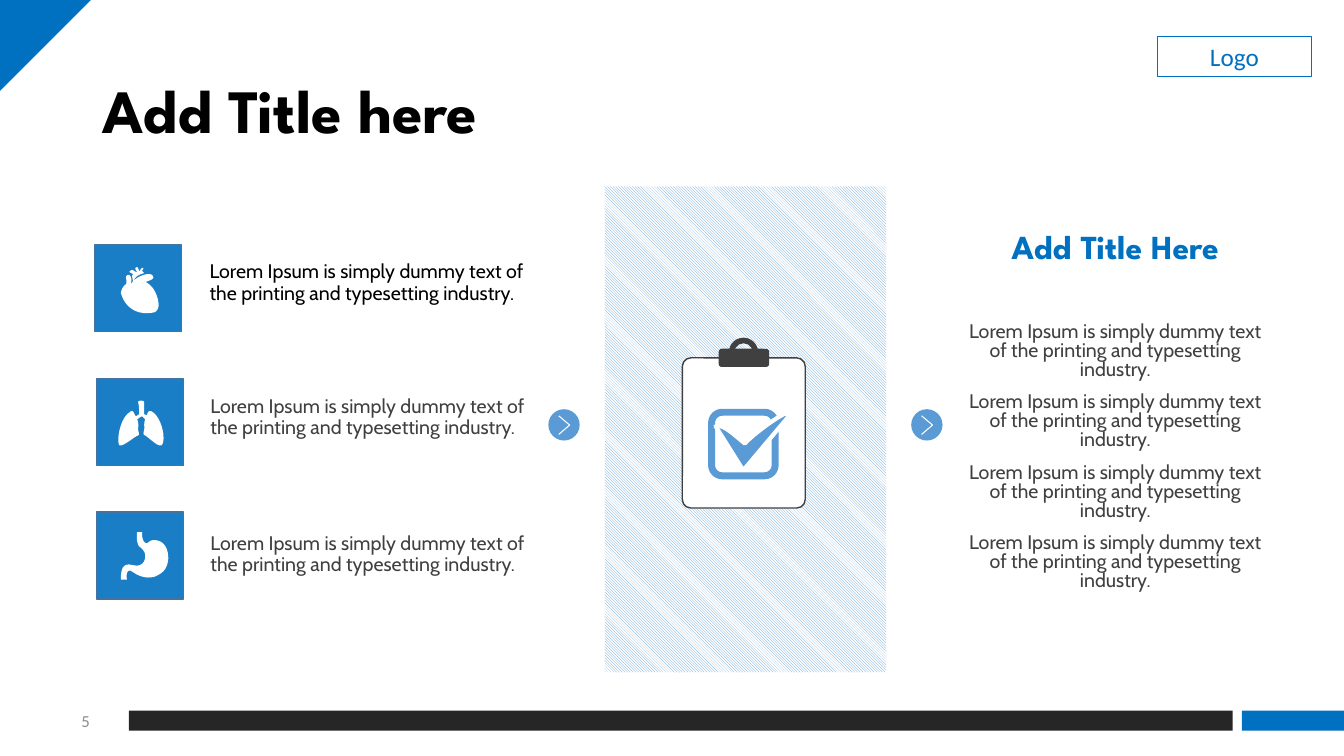
from lxml.etree import SubElement
from pptx import Presentation
from pptx.dml.color import RGBColor
from pptx.enum.dml import MSO_PATTERN
from pptx.enum.shapes import MSO_SHAPE as Shape
from pptx.enum.text import MSO_ANCHOR as Anchor, PP_ALIGN as Align
from pptx.oxml.ns import qn
from pptx.util import Pt

BLUE, LIGHT_BLUE, TILE_EDGE = "0070C0", "5B9BD5", "43739E"
WHITE, BLACK, CHARCOAL, GRAY = "FFFFFF", "000000", "404040", "8C8C8C"
LOREM = "Lorem Ipsum is simply dummy text of the printing and typesetting industry."
OUTLINE_UNIT = 0.72
CURVE_STEPS = 10

HEART = [
    [(147, 272), (149, 272, 150, 272, 151, 273), (156, 278, 143, 279, 145, 280),
     (150, 283, 153, 287, 155, 292), (157, 297, 160, 307, 153, 310),
     (133, 314, 123, 302, 120, 291), (120, 288, 122, 284, 125, 282),
     (126, 280, 125, 277, 125, 275), (125, 272, 132, 270, 130, 282),
     (133, 276, 142, 272, 147, 272)],
    [(136, 265), (137, 265, 138, 269, 138, 269), (139, 269, 140, 265, 142, 266),
     (143, 266, 141, 268, 141, 269), (143, 271), (135, 273, 134, 276, 132, 279),
     (131, 274), (132, 272), (131, 271, 127, 270, 129, 269),
     (132, 266, 133, 270, 136, 270), (136, 269, 132, 266, 136, 265)],
]
LUNGS = [
    [(137, 399), (137, 397, 143, 397, 143, 399), (143, 411), (146, 412),
     (146, 410, 147, 407, 150, 408), (159, 412, 165, 433, 161, 441),
     (158, 445, 150, 436, 144, 432), (141, 431, 143, 428, 143, 426),
     (144, 424, 142, 422, 144, 416), (143, 415, 142, 414, 141, 413),
     (138, 414, 138, 415, 136, 416), (138, 420, 137, 424, 137, 426),
     (137, 428, 139, 431, 137, 432), (132, 434, 124, 442, 119, 442),
     (115, 441, 118, 414, 130, 408), (133, 407, 133, 412, 135, 413),
     (138, 411), (138, 408, 138, 402, 137, 399)],
]
STOMACH = [
    [(136, 528), (141, 528), (141, 532, 141, 537, 145, 539),
     (148, 539, 148, 535, 155, 536), (162, 537, 167, 543, 167, 554),
     (166, 565, 162, 568, 154, 572), (141, 576, 132, 567, 129, 566),
     (126, 566, 125, 570, 126, 575), (120, 575), (120, 569, 120, 560, 128, 560),
     (134, 561, 139, 563, 143, 557), (145, 552, 145, 547, 138, 542),
     (137, 541, 135, 536, 136, 528)],
]
CHECK_MARK = [
    [(739, 440), (749, 429, 782, 405, 786, 409), (738, 466), (737, 466),
     (710, 423), (717, 420, 729, 432, 739, 440)],
]


def color(hex_string):
    """Return the colour for a hex string."""
    return RGBColor.from_string(hex_string)


def style(shape, fill=None, line=None, line_width=1, alpha=None):
    """Set the fill and line of a shape and remove its shadow."""
    shape.shadow.inherit = False
    if fill:
        shape.fill.solid()
        shape.fill.fore_color.rgb = color(fill)
    else:
        shape.fill.background()
    if alpha:
        fill_color = shape.fill._xPr.find(qn("a:solidFill"))[0]
        SubElement(fill_color, qn("a:alpha"), val=str(alpha * 1000))
    if line:
        shape.line.color.rgb = color(line)
        shape.line.width = Pt(line_width)
    else:
        shape.line.fill.background()
    return shape


def add_preset(slide, kind, box, **look):
    """Add a styled preset shape in a box given in points."""
    shape = slide.shapes.add_shape(kind, *map(Pt, box))
    return style(shape, **look)


def write(shape, paragraphs, size, font, hex_string, align=Align.LEFT,
          anchor=Anchor.TOP, spacing=1.0, before=0, bold=False):
    """Write equally styled paragraphs into a shape."""
    frame = shape.text_frame
    frame.word_wrap = True
    frame.vertical_anchor = anchor
    frame.text = "\n".join(paragraphs)
    for paragraph in frame.paragraphs:
        paragraph.alignment = align
        paragraph.line_spacing = spacing
        paragraph.space_before = Pt(before)
        paragraph.font.size = Pt(size)
        paragraph.font.name = font
        paragraph.font.bold = bold
        paragraph.font.color.rgb = color(hex_string)


def add_text(slide, box, paragraphs, *args, **options):
    """Add a text box in a box given in points."""
    write(slide.shapes.add_textbox(*map(Pt, box)), paragraphs, *args, **options)


def bezier(points, t):
    """Return the point at t on a cubic curve."""
    weights = ((1 - t) ** 3, 3 * t * (1 - t) ** 2, 3 * t * t * (1 - t), t ** 3)
    return tuple(sum(w * p[axis] for w, p in zip(weights, points)) for axis in (0, 1))


def flatten(contour):
    """Turn a contour of lines and curves into a list of points."""
    points = [contour[0]]
    for segment in contour[1:]:
        if len(segment) == 2:
            points.append(segment)
        else:
            controls = [points[-1], segment[:2], segment[2:4], segment[4:]]
            points += [bezier(controls, step / CURVE_STEPS)
                       for step in range(1, CURVE_STEPS + 1)]
    return points


def add_outline(slide, contours, unit=OUTLINE_UNIT, close=True, **look):
    """Add a freeform from contours measured in units of points."""
    builder = None
    for contour in contours:
        points = [(Pt(x * unit), Pt(y * unit)) for x, y in flatten(contour)]
        if builder is None:
            builder = slide.shapes.build_freeform(*points[0])
        else:
            builder.move_to(*points[0])
        builder.add_line_segments(points[1:], close=close)
    style(builder.convert_to_shape(), **look)


def add_arrow_badge(slide, left, top=292.3):
    """Add a round badge with a thin chevron."""
    add_preset(slide, Shape.OVAL, (left, top, 22.4, 22.4), fill=LIGHT_BLUE)
    chevron = [(left + 7.4, top + 4.7), (left + 15.2, top + 11.3), (left + 7.4, top + 18)]
    add_outline(slide, [chevron], unit=1, close=False, line=WHITE, line_width=0.75)


def add_organ_row(slide, tile, text_corner, icon, hex_string):
    """Add a tile with an organ icon and its text."""
    add_preset(slide, Shape.RECTANGLE, (*tile, 62, 62), fill=BLUE, alpha=90, line=TILE_EDGE)
    add_outline(slide, icon, fill=WHITE)
    add_text(slide, (*text_corner, 239.8, 48.2), [LOREM], 14, "Cabin", hex_string, spacing=0.9)


def add_frame(slide):
    """Add the corner, footer bars, page number and logo box."""
    corner = add_preset(slide, Shape.RIGHT_TRIANGLE, (0, 0, 65, 65), fill=BLUE)
    corner.rotation = 90
    add_preset(slide, Shape.RECTANGLE, (92, 507.6, 788.4, 14.4), fill="262626")
    add_preset(slide, Shape.RECTANGLE, (887, 507.6, 73, 14.4), fill=BLUE)
    add_text(slide, (32.4, 500.4, 38.9, 28.8), ["5"], 12, "Calibri", GRAY,
             align=Align.RIGHT, anchor=Anchor.MIDDLE)
    logo = add_preset(slide, Shape.RECTANGLE, (826.6, 25.9, 110.2, 28.8),
                      line=BLUE, line_width=0.75)
    write(logo, ["Logo"], 18, "Calibri", BLUE, align=Align.CENTER)


def add_clipboard_panel(slide):
    """Add the striped panel with the clipboard."""
    panel = add_preset(slide, Shape.RECTANGLE, (432, 133.2, 201, 347))
    panel.fill.patterned()
    panel.fill.pattern = MSO_PATTERN.LIGHT_DOWNWARD_DIAGONAL
    panel.fill.fore_color.rgb = color(LIGHT_BLUE)
    panel.fill.back_color.rgb = color(WHITE)
    board = add_preset(slide, Shape.ROUNDED_RECTANGLE, (487.4, 255.6, 87.8, 107.3),
                       fill=WHITE, line=CHARCOAL)
    board.adjustments[0] = 0.07
    add_preset(slide, Shape.ROUNDED_RECTANGLE, (513.4, 249.1, 36, 13), fill=CHARCOAL)
    ring = add_preset(slide, Shape.BLOCK_ARC, (520.6, 241.2, 20.9, 20.9), fill=CHARCOAL)
    for index, value in enumerate((108, 213.89, 0.19)):
        ring.adjustments[index] = value
    add_preset(slide, Shape.ROUNDED_RECTANGLE, (508.3, 294.5, 45.4, 45.4),
               fill=WHITE, line=LIGHT_BLUE, line_width=5)
    add_outline(slide, CHECK_MARK, fill=LIGHT_BLUE, line=WHITE, line_width=3)


def main():
    """Build the slide and save it."""
    presentation = Presentation()
    presentation.slide_width, presentation.slide_height = Pt(960), Pt(540)
    slide = presentation.slides.add_slide(presentation.slide_layouts[6])
    add_frame(slide)
    add_text(slide, (66.2, 28.8, 828, 104.4), ["Add Title here"], 44, "League Spartan",
             BLACK, anchor=Anchor.MIDDLE, spacing=0.9, bold=True)
    add_organ_row(slide, (67.7, 175), (142.6, 183.6), HEART, BLACK)
    add_organ_row(slide, (69.1, 270.7), (143.3, 279.4), LUNGS, CHARCOAL)
    add_organ_row(slide, (69.1, 365.8), (143.3, 377.3), STOMACH, CHARCOAL)
    add_clipboard_panel(slide)
    for left in (391.7, 650.9):
        add_arrow_badge(slide, left)
    add_text(slide, (713.5, 163.4, 166.3, 53.3), ["Add Title Here"], 24, "League Spartan",
             BLUE, align=Align.CENTER, spacing=0.8, bold=True)
    add_text(slide, (681.8, 227.5, 229.7, 217.4), [LOREM] * 4, 14, "Cabin", CHARCOAL,
             align=Align.CENTER, spacing=0.8, before=10)
    presentation.save("out.pptx")


if __name__ == "__main__":
    main()
